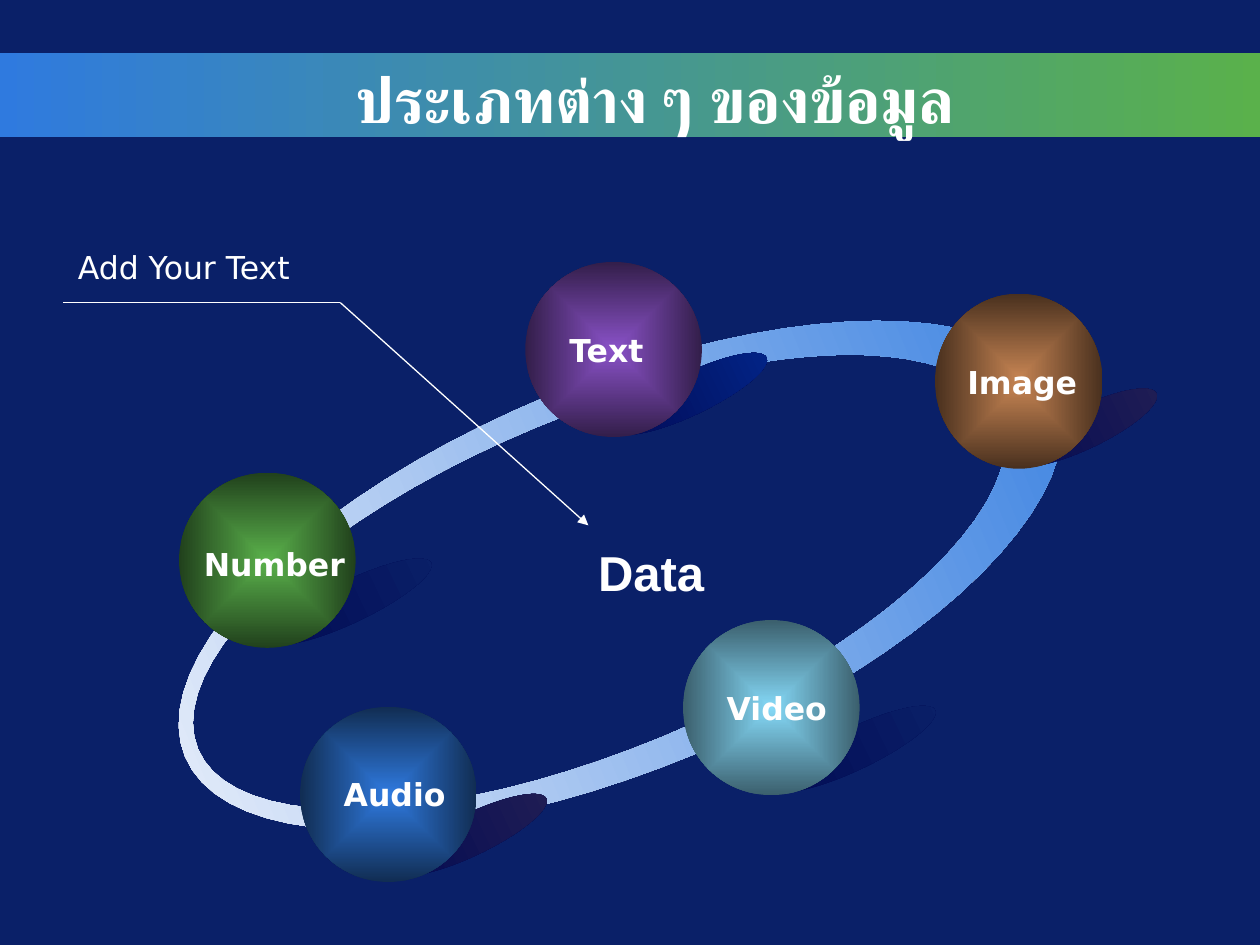
import math
from dataclasses import dataclass

import lxml.etree
import pptx
import pptx.dml.color
import pptx.enum.shapes
import pptx.enum.text
import pptx.oxml
import pptx.oxml.ns
import pptx.util

Cm, Pt = pptx.util.Cm, pptx.util.Pt
RGB = pptx.dml.color.RGBColor.from_string
qn = pptx.oxml.ns.qn
SHAPE = pptx.enum.shapes.MSO_SHAPE
ALIGN = pptx.enum.text.PP_ALIGN
FIT = pptx.enum.text.MSO_AUTO_SIZE


@dataclass
class Theme:
    background: str = "0A2068"
    white: str = "FFFFFF"
    blue: str = "2F7ADF"
    green: str = "5AB14B"
    ring_light: str = "F4F6FC"
    shadow: str = "020A53"
    shadow_blue: str = "022589"
    shadow_plum: str = "211E54"
    title_size: int = 36
    centre_size: int = 28
    label_size: int = 18
    title_font: str = "Lato"
    label_font: str = "DejaVu Sans"
    centre_font: str = "Arial"


theme = Theme()


def paint(shape, start, end, from_centre=False):
    """Fill a shape with a two-colour gradient, without line or shadow."""
    shape.shadow.inherit = False
    shape.line.fill.background()
    shape.fill.gradient()
    shape.fill.gradient_angle = 0
    for stop, colour in zip(shape.fill.gradient_stops, (start, end)):
        stop.color.rgb = RGB(colour)
    if from_centre:
        linear = next(shape._element.iter(qn("a:lin")))
        radial = lxml.etree.Element(qn("a:path"), path="shape")
        lxml.etree.SubElement(radial, qn("a:fillToRect"),
                              l="50000", t="50000", r="50000", b="50000")
        linear.getparent().replace(linear, radial)


def write(frame, words, size, font, bold=True, align=ALIGN.LEFT):
    """Add one run of white text to the first paragraph of a frame."""
    frame.paragraphs[0].alignment = align
    run = frame.paragraphs[0].add_run()
    run.text = words
    run.font.size, run.font.name, run.font.bold = Pt(size), font, bold
    run.font.color.rgb = RGB(theme.white)
    return run


deck = pptx.Presentation()
deck.slide_width, deck.slide_height = Cm(25.4), Cm(19.05)
slide = deck.slides.add_slide(deck.slide_layouts[5])
slide.background.fill.solid()
slide.background.fill.fore_color.rgb = RGB(theme.background)
shapes = slide.shapes

# Title band
band = shapes.add_shape(SHAPE.RECTANGLE, 0, Cm(1.07), Cm(25.4), Cm(1.7))
paint(band, theme.blue, theme.green)

# Tilted ring: outer ellipse with a slightly shifted inner ellipse cut out
centre_x, centre_y = 12.51, 11.6
ring_steps = 80
contours = [(9.51, 3.9, 0, 0, 1), (8.76, 3.37, -0.45, -0.04, -1)]
outline = None
for radius_x, radius_y, shift_x, shift_y, direction in contours:
    points = []
    for step in range(ring_steps):
        angle = direction * 2 * math.pi * step / ring_steps
        points.append((Cm(centre_x + shift_x + radius_x * math.cos(angle)),
                       Cm(centre_y + shift_y + radius_y * math.sin(angle))))
    if outline is None:
        outline = shapes.build_freeform(*points[0])
    else:
        outline.move_to(*points[0])
    outline.add_line_segments(points[1:], close=True)
ring = outline.convert_to_shape()
ring.rotation = 337.4
paint(ring, theme.ring_light, theme.blue)

# Shadows of the spheres: left, top, width, far colour
shadows = [
    (12.24, 7.52, 3.38, theme.shadow_blue),
    (20.29, 8.2, 3.18, theme.shadow_plum),
    (7.8, 16.41, 3.38, theme.shadow_plum),
    (15.42, 14.68, 3.61, theme.background),
    (5.26, 11.71, 3.61, theme.background),
]
for left, top, width, far_colour in shadows:
    cast = shapes.add_shape(SHAPE.OVAL, Cm(left), Cm(top), Cm(width), Cm(0.84))
    cast.rotation = 334.3
    paint(cast, theme.shadow, far_colour)

# Spheres: left, top, width, core colour, rim colour
spheres = [
    (10.59, 5.28, 3.56, "8A52C8", "331E4A"),
    (3.61, 9.53, 3.56, theme.green, "21411C"),
    (6.05, 14.25, 3.56, theme.blue, "112D53"),
    (13.77, 12.5, 3.56, "85D9F7", "3B5F6D"),
    (18.85, 5.92, 3.38, "C48352", "49301E"),
]
for left, top, width, core, rim in spheres:
    ball = shapes.add_shape(SHAPE.OVAL, Cm(left), Cm(top), Cm(width), Cm(3.53))
    paint(ball, core, rim, from_centre=True)

# Labels: words, left, top, width, bold
labels = [
    ("Number", 3.86, 10.87, 3.4, True),
    ("Text", 11.23, 6.55, 2.11, True),
    ("Image", 19.25, 7.19, 2.84, True),
    ("Video", 14.4, 13.77, 2.54, True),
    ("Audio", 6.68, 15.49, 2.59, True),
    ("Add Your Text", 1.32, 4.88, 5.03, False),
]
for words, left, top, width, bold in labels:
    frame = shapes.add_textbox(Cm(left), Cm(top), Cm(width), Cm(1.02)).text_frame
    frame.word_wrap = False
    frame.auto_size = FIT.SHAPE_TO_FIT_TEXT
    write(frame, words, theme.label_size, theme.label_font, bold)

# Centre word with a text shadow
data = shapes.add_textbox(Cm(9.53), Cm(10.82), Cm(7.19), Cm(1.45)).text_frame
data.word_wrap = True
data.auto_size = FIT.SHAPE_TO_FIT_TEXT
data_run = write(data, "Data", theme.centre_size, theme.centre_font,
                 align=ALIGN.CENTER)
effects = lxml.etree.Element(qn("a:effectLst"))
drop = lxml.etree.SubElement(effects, qn("a:outerShdw"),
                             dist="35921", dir="2700000")
lxml.etree.SubElement(drop, qn("a:srgbClr"), val="000000")
data_run._r.find(qn("a:rPr")).find(qn("a:solidFill")).addnext(effects)

# Callout: arrow to the centre and rule under the note
bend = Cm(6.86), Cm(6.1)
for end, has_head in [((Cm(11.86), Cm(10.59)), True), ((Cm(1.27), Cm(6.1)), False)]:
    leader = shapes.add_connector(
        pptx.enum.shapes.MSO_CONNECTOR.STRAIGHT, *bend, *end)
    leader.line.color.rgb = RGB(theme.white)
    leader.line.width = Pt(0.75)
    if has_head:
        lxml.etree.SubElement(leader.line._get_or_add_ln(), qn("a:tailEnd"),
                              type="triangle")
    lxml.etree.SubElement(leader._element.spPr, qn("a:effectLst"))

# Title, brought in front of the band
title = shapes.title
title.left, title.top, title.width, title.height = (
    Cm(1.07), Cm(1.19), Cm(18.42), Cm(1.57))
title.text_frame.word_wrap = True
title.text_frame.auto_size = FIT.NONE
title.text_frame.vertical_anchor = pptx.enum.text.MSO_ANCHOR.MIDDLE
title_run = write(title.text_frame, "ประเภทต่าง ๆ ของข้อมูล", theme.title_size,
                  theme.title_font, align=ALIGN.RIGHT)
lxml.etree.SubElement(title_run._r.find(qn("a:rPr")), qn("a:cs"),
                      typeface=theme.title_font)
shapes._spTree.append(title._element)

deck.save("out.pptx")
